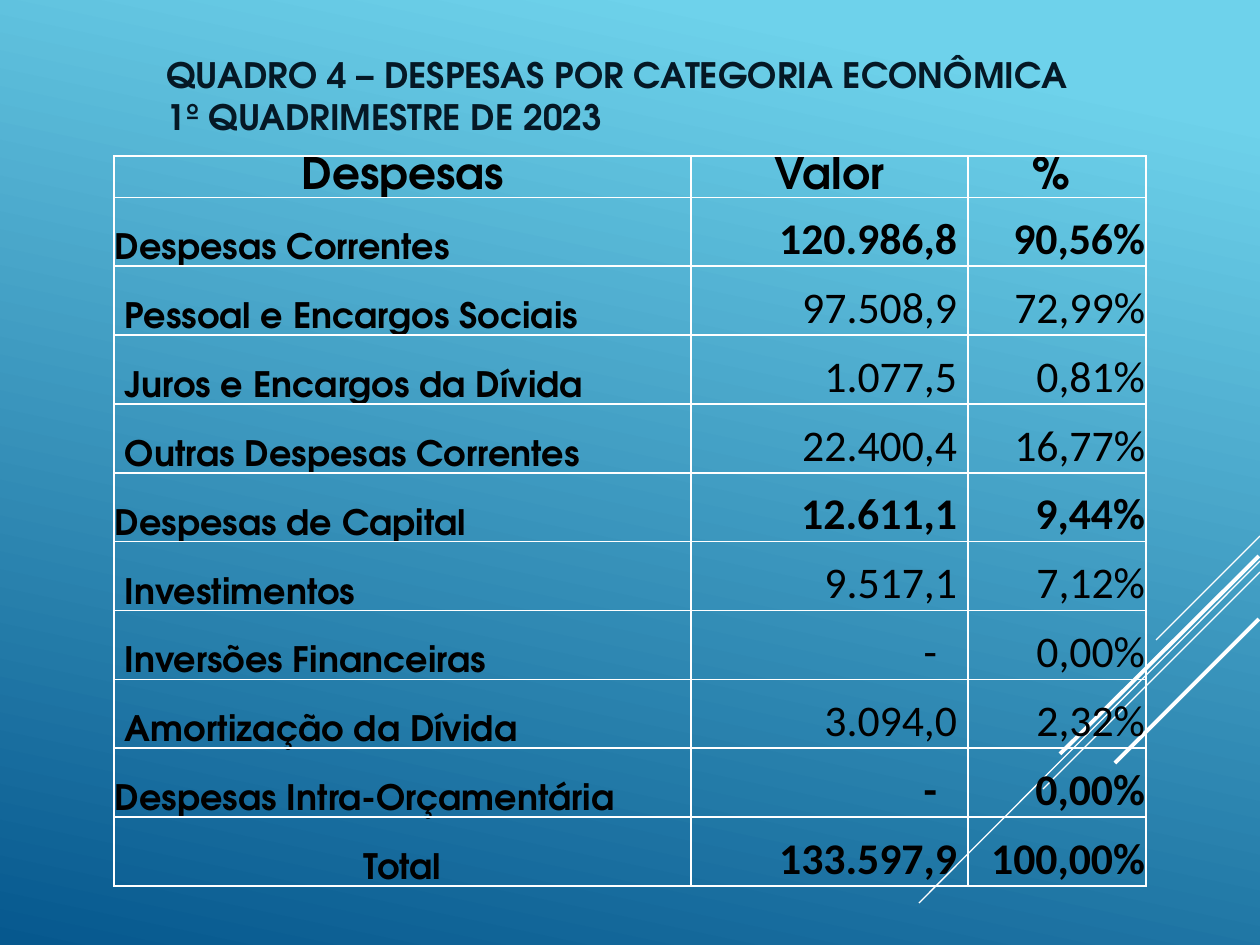
import pptx
import pptx.util
import pptx.dml.color
import pptx.enum.shapes
import pptx.enum.text
import pptx.oxml
import pptx.oxml.ns
from dataclasses import dataclass

ALIGN = pptx.enum.text.PP_ALIGN
ANCHOR = pptx.enum.text.MSO_ANCHOR
SCALE = 914400 / 126


@dataclass(frozen=True)
class Theme:
    light: str = "6ED2EB"
    deep: str = "06588E"
    line: str = "FFFFFF"
    title: str = "051825"
    ink: str = "000000"
    head: str = "TeX Gyre Adventor"
    body: str = "Calibri"
    small: int = 20
    large: int = 25


THEME = Theme()
HEADS = ["Despesas", "Valor", "%"]
ROWS = [
    (0, "Despesas Correntes", "120.986,8", "90,56%"),
    (1, "Pessoal e Encargos Sociais", "97.508,9", "72,99%"),
    (1, "Juros e Encargos da Dívida", "1.077,5", "0,81%"),
    (1, "Outras Despesas Correntes", "22.400,4", "16,77%"),
    (0, "Despesas de Capital", "12.611,1", "9,44%"),
    (1, "Investimentos", "9.517,1", "7,12%"),
    (1, "Inversões Financeiras", "-", "0,00%"),
    (1, "Amortização da Dívida", "3.094,0", "2,32%"),
    (0, "Despesas Intra-Orçamentária", "-", "0,00%"),
    (0, "Total", "133.597,9", "100,00%"),
]


def px(num):
    return pptx.util.Emu(round(num * SCALE))


def tint(code):
    return pptx.dml.color.RGBColor.from_string(code)


def put(item, values):
    for key, value in values.items():
        setattr(item, key, value)


def style(font, name, size, color, bold=True):
    put(font, {"name": name, "size": pptx.util.Pt(size), "bold": bold})
    font.color.rgb = tint(color)


def paint(slide):
    fill = slide.background.fill
    fill.gradient()
    fill.gradient_angle = 258
    stops = [(0.1, THEME.light), (1, THEME.deep)]
    for stop, (place, code) in zip(fill.gradient_stops, stops):
        stop.position = place
        stop.color.rgb = tint(code)


def add_rays(slide, box):
    left, top = box
    rays = [
        (341, 0, 237, 104, 0.75),
        (341, 25, 0, 367, 0.75),
        (341, 36, 124, 253, 0.75),
        (340, 20, 141, 218, 2.25),
        (340, 83, 196, 227, 2.25),
    ]
    kind = pptx.enum.shapes.MSO_CONNECTOR.STRAIGHT
    for x1, y1, x2, y2, width in rays:
        ray = slide.shapes.add_connector(
            kind, px(left + x1), px(top + y1), px(left + x2), px(top + y2))
        ray.line.width = pptx.util.Pt(width)
        ray.line.color.rgb = tint(THEME.line)
        pptx.oxml.ns.qn("a:effectLst")
        ray.element.spPr.append(pptx.oxml.parse_xml(
            f'<a:effectLst {pptx.oxml.ns.nsdecls("a")}/>'))


def add_title(slide, box):
    title = slide.shapes.title
    put(title, dict(zip(("left", "top", "width", "height"), map(px, box))))
    frame = title.text_frame
    put(frame, {"word_wrap": True, "vertical_anchor": ANCHOR.MIDDLE,
                "auto_size": pptx.enum.text.MSO_AUTO_SIZE.NONE})
    frame.text = ("QUADRO 4 – DESPESAS POR CATEGORIA ECONÔMICA\v"
                  "1º QUADRIMESTRE DE 2023")
    para = frame.paragraphs[0]
    para.alignment = ALIGN.LEFT
    for run in para.runs:
        style(run.font, THEME.head, THEME.small, THEME.title)


def edge(cell):
    props = cell._tc.get_or_add_tcPr()
    space = pptx.oxml.ns.nsdecls("a")
    for spot, side in enumerate("LRTB"):
        props.insert(spot, pptx.oxml.parse_xml(
            f'<a:ln{side} {space} w="12700"><a:solidFill>'
            f'<a:srgbClr val="{THEME.line}"/></a:solidFill></a:ln{side}>'))


def write(cell, text, align, anchor, font, size, bold=True, left=1, right=1):
    put(cell, {"margin_left": px(left), "margin_right": px(right),
               "margin_top": px(1), "margin_bottom": 0,
               "vertical_anchor": anchor, "text": text})
    cell.fill.background()
    edge(cell)
    para = cell.text_frame.paragraphs[0]
    para.alignment = align
    style(para.runs[0].font, font, size, THEME.ink, bold)


def add_grid(slide, box):
    left, top, width, height = box
    head = 41
    table = slide.shapes.add_table(
        len(ROWS) + 1, 3, *map(px, box)).table
    put(table, {"first_row": False, "horz_banding": False})
    for col, wide in zip(table.columns, (577, 277, width - 854)):
        col.width = px(wide)
    for row in table.rows:
        row.height = px((height - head) / len(ROWS))
    table.rows[0].height = px(head)
    for spot, text in enumerate(HEADS):
        write(table.cell(0, spot), text, ALIGN.CENTER, ANCHOR.MIDDLE,
              THEME.head, THEME.large, right=13 if text == "%" else 1)
    for line, (level, label, value, share) in enumerate(ROWS, 1):
        align = ALIGN.CENTER if label == "Total" else ALIGN.LEFT
        write(table.cell(line, 0), label, align, ANCHOR.BOTTOM,
              THEME.head, THEME.small, left=1 + 10 * level)
        gap = 31 if value == "-" else 11
        for spot, text, right in ((1, value, gap), (2, share, 1)):
            write(table.cell(line, spot), text, ALIGN.RIGHT, ANCHOR.BOTTOM,
                  THEME.body, THEME.large, not level, right=right)


def main():
    deck = pptx.Presentation()
    put(deck, {"slide_width": px(1260), "slide_height": px(945)})
    slide = deck.slides.add_slide(deck.slide_layouts[5])
    paint(slide)
    add_rays(slide, (919, 536))
    add_title(slide, (154, 45, 1071, 100))
    add_grid(slide, (114, 156, 1032, 730))
    deck.save("out.pptx")


if __name__ == "__main__":
    main()
